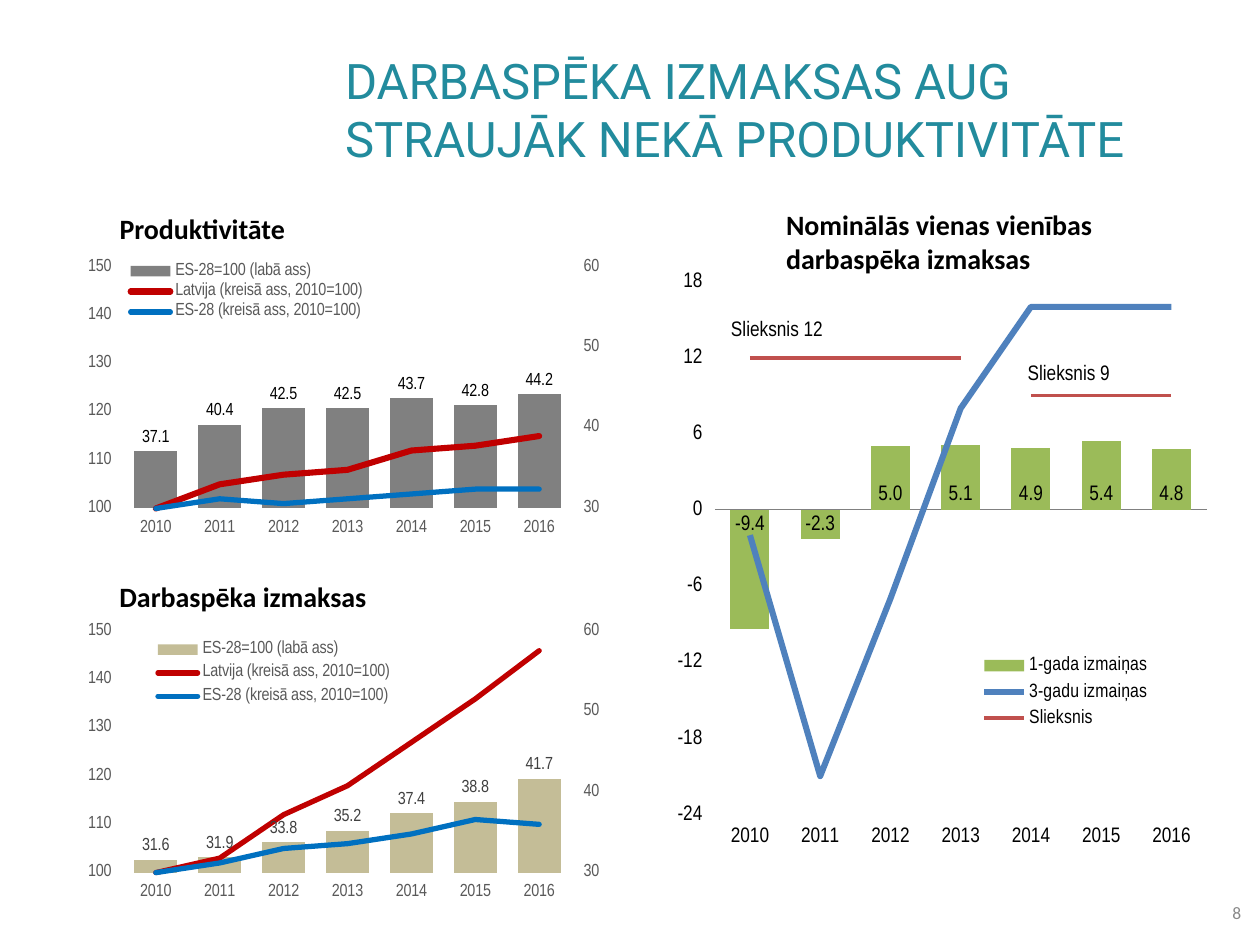
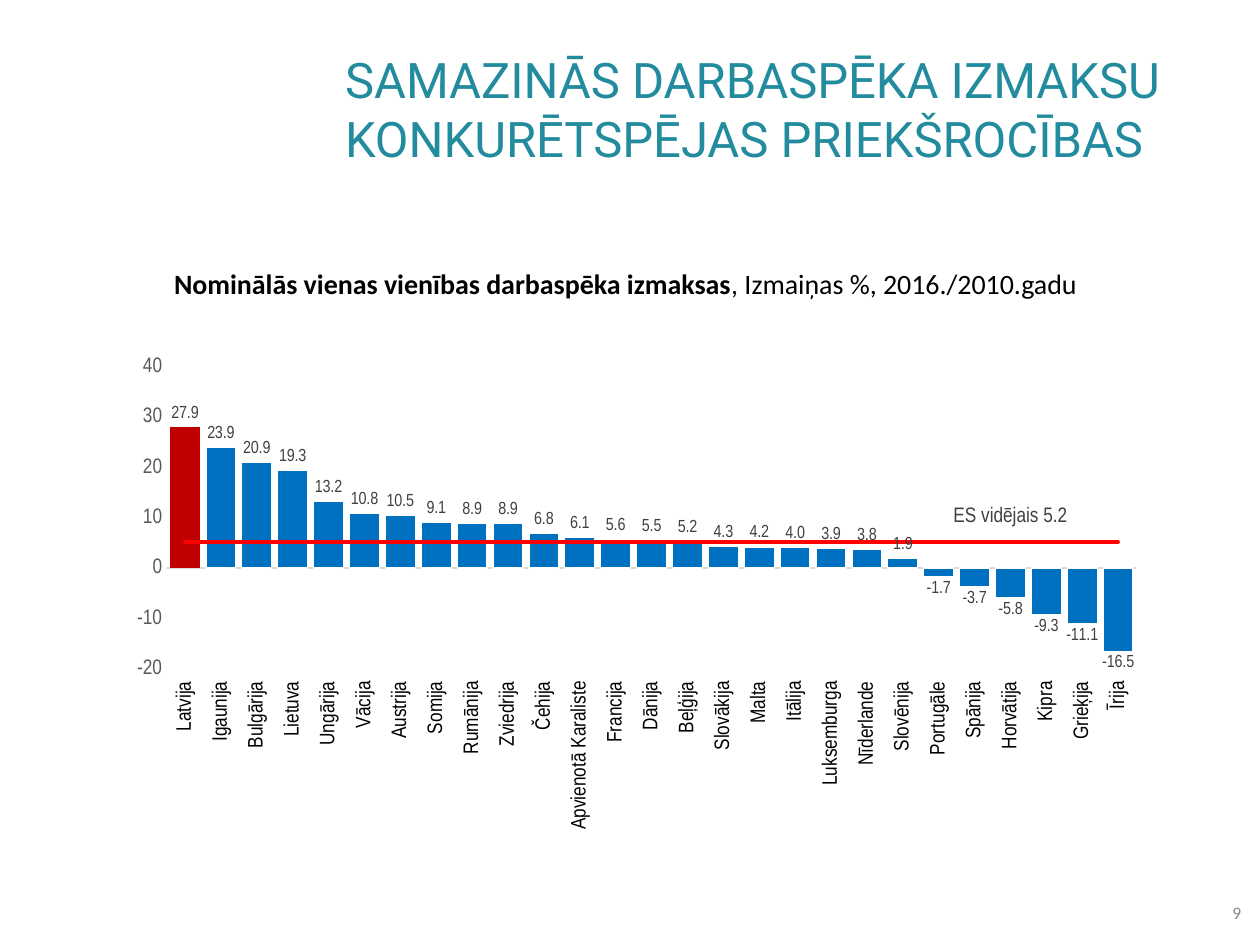
import copy
import dataclasses
import typing

import pptx
import pptx.chart.axis
import pptx.chart.data
import pptx.dml.color
import pptx.enum.chart
import pptx.enum.text
import pptx.oxml
import pptx.oxml.ns
import pptx.util

Inches = pptx.util.Inches
Pt = pptx.util.Pt
qn = pptx.oxml.ns.qn
ALIGN = pptx.enum.text.PP_ALIGN
ANCHOR = pptx.enum.text.MSO_ANCHOR
LABEL = pptx.enum.chart.XL_LABEL_POSITION
TICK = pptx.enum.chart.XL_TICK_MARK
SIDE = pptx.enum.chart.XL_TICK_LABEL_POSITION

TEAL, BLACK, GREY, DARK, PALE = "228B9D", "000000", "595959", "404040", "898989"
RED, BLUE = "C00000", "0070C0"
HEAD, BODY, NARROW = "Roboto", "Calibri", "Arial Narrow"
YEARS = [str(year) for year in range(2010, 2017)]
Box = tuple[float, float, float, float]


class Run(typing.NamedTuple):
    text: str
    size: float
    color: str = BLACK
    bold: bool = False
    font: str = BODY


class Note(typing.NamedTuple):
    """Name and value shown beside one point, moved by a share of the chart."""
    point: int
    right: float
    down: float
    color: str = BLACK


@dataclasses.dataclass
class Line:
    name: str
    vals: list
    color: str
    width: float
    note: Note | None = None


@dataclasses.dataclass
class Bars:
    name: str
    vals: list
    color: str
    text: str = BLACK
    size: float = 10
    place: typing.Any = LABEL.OUTSIDE_END
    edge: str | None = None
    first: str | None = None


@dataclasses.dataclass
class Scale:
    low: float
    high: float
    step: float


@dataclasses.dataclass
class Graph:
    box: Box
    cats: list
    bars: Bars
    lines: list
    plot: Box
    scale: Scale
    left: Scale | None = None
    gap: int = 50
    size: float = 12
    color: str = GREY
    names: str = BLACK
    base: str | None = None
    legend: Box | None = None
    keys: float = 10
    hide: int | None = None
    cap: str = "rnd"
    turn: bool = False
    tick: typing.Any = TICK.OUTSIDE


def rgb(color: str):
    return pptx.dml.color.RGBColor.from_string(color)


def node(tag: str, inner: str = "", **attrs):
    """Make one chart element with the given inner XML."""
    names = "".join(f' {key}="{val}"' for key, val in attrs.items())
    space = pptx.oxml.ns.nsdecls("c")
    return pptx.oxml.parse_xml(f"<c:{tag} {space}{names}>{inner}</c:{tag}>")


def place(box: Box, inner: bool = False):
    """Make a manual layout from shares of the chart's size."""
    parts = '<c:layoutTarget val="inner"/>' if inner else ""
    parts += '<c:xMode val="edge"/><c:yMode val="edge"/>'
    parts += "".join(f'<c:{key} val="{val}"/>' for key, val in zip("xywh", box))
    return node("layout", f"<c:manualLayout>{parts}</c:manualLayout>")


def style(font, size: float, color: str, name: str = NARROW, bold: bool = False) -> None:
    font.size, font.name, font.bold = Pt(size), name, bold
    font.color.rgb = rgb(color)


def write(slide, box: Box, runs: list[Run], align=ALIGN.LEFT, anchor=ANCHOR.TOP) -> None:
    frame = slide.shapes.add_textbox(*map(Inches, box)).text_frame
    frame.word_wrap = True
    frame.vertical_anchor = anchor
    para = frame.paragraphs[0]
    para.alignment = align
    for item in runs:
        run = para.add_run()
        run.text = item.text
        style(run.font, item.size, item.color, item.font, item.bold)


def start(deck, title: str, box: Box, page: int):
    slide = deck.slides.add_slide(deck.slide_layouts[6])
    write(slide, box, [Run(title, 28, TEAL, font=HEAD)], anchor=ANCHOR.BOTTOM)
    write(slide, (9.62, 7.08, 0.33, 0.33), [Run(str(page), 10, PALE)],
          ALIGN.RIGHT, ANCHOR.MIDDLE)
    return slide


def span(axis, scale: Scale) -> None:
    axis.minimum_scale, axis.maximum_scale = scale.low, scale.high
    axis.major_unit = scale.step


def set_axes(chart, graph: Graph) -> None:
    cats, vals = chart.category_axis, chart.value_axis
    for axis, color in ((cats, graph.names), (vals, graph.color)):
        axis.has_major_gridlines = False
        axis.major_tick_mark = axis.minor_tick_mark = TICK.NONE
        axis.format.line.fill.background()
        style(axis.tick_labels.font, graph.size, color)
    cats.tick_label_position = SIDE.LOW
    if graph.base:
        cats.format.line.color.rgb = rgb(graph.base)
        cats.format.line.width = Pt(0.75)
    if graph.turn:
        cats._element.find(qn("c:txPr")).find(qn("a:bodyPr")).set("rot", "-5400000")
    vals.major_tick_mark = graph.tick
    vals.tick_labels.number_format = "0"
    vals.tick_labels.number_format_is_linked = False
    span(vals, graph.scale)


def set_bars(plot, bars: Bars, gap: int) -> None:
    plot.gap_width = gap
    plot.vary_by_categories = False
    series = plot.series[0]
    series.invert_if_negative = False
    series.format.fill.solid()
    series.format.fill.fore_color.rgb = rgb(bars.color)
    if bars.edge:
        series.format.line.color.rgb = rgb(bars.edge)
        series.format.line.width = Pt(0.75)
    if bars.first:
        fill = series.points[0].format.fill
        fill.solid()
        fill.fore_color.rgb = rgb(bars.first)
    labels = series.data_labels
    labels.show_value = True
    labels.position = bars.place
    labels.number_format, labels.number_format_is_linked = "0.0", False
    style(labels.font, bars.size, bars.text)


def split(chart) -> None:
    """Move all series but the first to a line plot on the same axes."""
    bar = chart.plots[0]._element
    line = node("lineChart", '<c:grouping val="standard"/><c:varyColors val="0"/>')
    for series in bar.findall(qn("c:ser"))[1:]:
        for flag in series.findall(qn("c:invertIfNegative")):
            series.remove(flag)
        line.append(series)
    line.append(node("marker", val=1))
    for link in bar.findall(qn("c:axId")):
        line.append(copy.deepcopy(link))
    bar.addnext(line)


def add_left(chart, scale: Scale) -> None:
    """Number the bars' scale on the right and give the lines one on the left."""
    cats, vals = chart.category_axis, chart.value_axis
    twins = [copy.deepcopy(axis._element) for axis in (cats, vals)]
    ids = dict(zip((twin.find(qn("c:axId")).get("val") for twin in twins), ("501", "502")))
    last = vals._element
    for twin in reversed(twins):
        for tag in ("c:axId", "c:crossAx"):
            link = twin.find(qn(tag))
            link.set("val", ids[link.get("val")])
        last.addnext(twin)
        last = twin
    for link in chart.plots[1]._element.findall(qn("c:axId")):
        link.set("val", ids[link.get("val")])
    pptx.chart.axis.CategoryAxis(twins[0]).visible = False
    left = pptx.chart.axis.ValueAxis(twins[1])
    span(left, scale)
    left.major_tick_mark = TICK.NONE
    left.tick_label_position = SIDE.LOW
    vals.tick_label_position = SIDE.HIGH


def add_note(series, note: Note, size: float) -> None:
    label = series.points[note.point].data_label
    label.position = LABEL.ABOVE
    style(label.font, size, note.color)
    series.data_labels.show_value = False
    group = series._element.find(qn("c:dLbls"))
    for old in group.findall(qn("c:showLeaderLines")):
        group.remove(old)
    group.append(node("showLeaderLines", val=0))
    mark = group.find(qn("c:dLbl"))
    mark.find(qn("c:showVal")).set("val", "1")
    mark.find(qn("c:showSerName")).set("val", "1")
    mark.append(node("separator", " "))
    shift = f'<c:x val="{note.right}"/><c:y val="{note.down}"/>'
    mark.find(qn("c:idx")).addnext(
        node("layout", f"<c:manualLayout>{shift}</c:manualLayout>"))


def set_lines(plot, graph: Graph) -> None:
    for series, line in zip(plot.series, graph.lines):
        series.smooth = False
        series.marker.style = pptx.enum.chart.XL_MARKER_STYLE.NONE
        series.format.line.color.rgb = rgb(line.color)
        series.format.line.width = Pt(line.width)
        series._element.find(".//" + qn("a:ln")).set("cap", graph.cap)
        if line.note:
            add_note(series, line.note, graph.size)


def add_legend(chart, graph: Graph) -> None:
    chart.has_legend = True
    legend = chart.legend
    legend.position = pptx.enum.chart.XL_LEGEND_POSITION.BOTTOM
    legend.include_in_layout = False
    style(legend.font, graph.keys, graph.color)
    over = legend._element.find(qn("c:overlay"))
    if graph.hide is not None:
        over.addprevious(node("legendEntry",
                              f'<c:idx val="{graph.hide}"/><c:delete val="1"/>'))
    over.addprevious(place(graph.legend))


def draw(slide, graph: Graph) -> None:
    data = pptx.chart.data.CategoryChartData()
    data.categories = graph.cats
    for item in (graph.bars, *graph.lines):
        data.add_series(item.name, item.vals)
    kind = pptx.enum.chart.XL_CHART_TYPE.COLUMN_CLUSTERED
    chart = slide.shapes.add_chart(kind, *map(Inches, graph.box), data).chart
    chart.has_title = chart.has_legend = False
    style(chart.font, graph.size, BLACK)
    set_axes(chart, graph)
    split(chart)
    set_bars(chart.plots[0], graph.bars, graph.gap)
    set_lines(chart.plots[1], graph)
    if graph.left:
        add_left(chart, graph.left)
    if graph.legend:
        add_legend(chart, graph)
    area = chart._chartSpace.find(".//" + qn("c:plotArea"))
    for old in area.findall(qn("c:layout")):
        area.remove(old)
    area.insert(0, place(graph.plot, True))


def compare(top: float, bars: Bars, latvia: Line, europe: list, legend: Box) -> Graph:
    """Latvia against the EU: level as bars, index as lines."""
    lines = [latvia, Line("ES-28 (kreisā ass, 2010=100)", europe, BLUE, 3)]
    return Graph((0.55, top, 4.33, 2.28), YEARS, bars, lines, (0.1, 0.04, 0.82, 0.84),
                 Scale(30, 60, 10), Scale(100, 150, 10), size=10, names=GREY, legend=legend)


def costs(deck) -> None:
    slide = start(deck, "DARBASPĒKA IZMAKSAS AUG STRAUJĀK NEKĀ PRODUKTIVITĀTE",
                  (2.64, 0.36, 7.07, 1.02), 8)
    level, latvia = "ES-28=100 (labā ass)", "Latvija (kreisā ass, 2010=100)"
    draw(slide, compare(
        2.03, Bars(level, [37.1, 40.4, 42.5, 42.5, 43.7, 42.8, 44.2], "808080"),
        Line(latvia, [100, 105, 107, 108, 112, 113, 115], RED, 3.5),
        [100, 102, 101, 102, 103, 104, 104], (0.1, 0.01, 0.45, 0.23)))
    draw(slide, compare(
        4.92, Bars(level, [31.6, 31.9, 33.8, 35.2, 37.4, 38.8, 41.7], "C4BD97", DARK),
        Line(latvia, [100, 103, 112, 118, 127, 136, 146], RED, 3),
        [100, 102, 105, 106, 108, 111, 110], (0.15, 0.05, 0.45, 0.27)))
    limit = "Slieksnis"
    draw(slide, Graph(
        (5.33, 2.04, 4.29, 4.86), YEARS,
        Bars("1-gada izmaiņas", [-9.4, -2.3, 5, 5.1, 4.9, 5.4, 4.8], "9BBB59",
             size=12, place=LABEL.INSIDE_BASE),
        [Line("3-gadu izmaiņas", [-2, -21, -7, 8, 16, 16, 16], "4F81BD", 3.5),
         Line(limit, [12] * 4 + [None] * 3, "C0504D", 2.25, Note(0, 0.05, -0.02)),
         Line(limit, [None] * 4 + [9] * 3, "C0504D", 1.75, Note(4, 0.07, -0.01))],
        (0.08, 0.04, 0.91, 0.87), Scale(-24, 18, 6), gap=80, color=BLACK, base="808080",
        legend=(0.56, 0.64, 0.34, 0.14), keys=11, hide=3, cap="flat"))
    for text, box in (("Produktivitāte", (0.85, 1.63, 1.95, 0.37)),
                      ("Darbaspēka izmaksas", (0.85, 4.55, 2.53, 0.37)),
                      ("Nominālās vienas vienības darbaspēka izmaksas",
                       (6.14, 1.6, 3.49, 0.64))):
        write(slide, box, [Run(text, 16, bold=True)])


def rank(deck) -> None:
    slide = start(deck, "SAMAZINĀS DARBASPĒKA IZMAKSU KONKURĒTSPĒJAS PRIEKŠROCĪBAS",
                  (2.64, 0.15, 6.98, 1.23), 9)
    lands = ("Latvija,Igaunija,Bulgārija,Lietuva,Ungārija,Vācija,Austrija,Somija,Rumānija,"
             "Zviedrija,Čehija,Apvienotā Karaliste,Francija,Dānija,Beļģija,Slovākija,Malta,"
             "Itālija,Luksemburga,Nīderlande,Slovēnija,Portugāle,Spānija,Horvātija,Kipra,"
             "Grieķija,Īrija").split(",")
    growth = [27.9, 23.9, 20.9, 19.3, 13.2, 10.8, 10.5, 9.1, 8.9, 8.9, 6.8, 6.1, 5.6, 5.5,
              5.2, 4.3, 4.2, 4, 3.9, 3.8, 1.9, -1.7, -3.7, -5.8, -9.3, -11.1, -16.5]
    mean = Line("ES vidējais", [5.2] * len(lands), "FF0000", 2, Note(23, 0, -0.02, DARK))
    draw(slide, Graph(
        (0.83, 2.75, 8.27, 3.94), lands,
        Bars("Izmaiņas", growth, BLUE, DARK, edge="FFFFFF", first=RED), [mean],
        (0.06, 0.04, 0.93, 0.61), Scale(-20, 40, 10), gap=20, base="D9D9D9", turn=True,
        tick=TICK.NONE))
    write(slide, (0.83, 2.07, 8.27, 0.37),
          [Run("Nominālās vienas vienības darbaspēka izmaksas", 16, bold=True),
           Run(", Izmaiņas %, 2016./2010.gadu", 16)], ALIGN.CENTER)


def main() -> None:
    deck = pptx.Presentation()
    deck.slide_width, deck.slide_height = Inches(10), Inches(7.5)
    costs(deck)
    rank(deck)
    deck.save("out.pptx")


if __name__ == "__main__":
    main()
